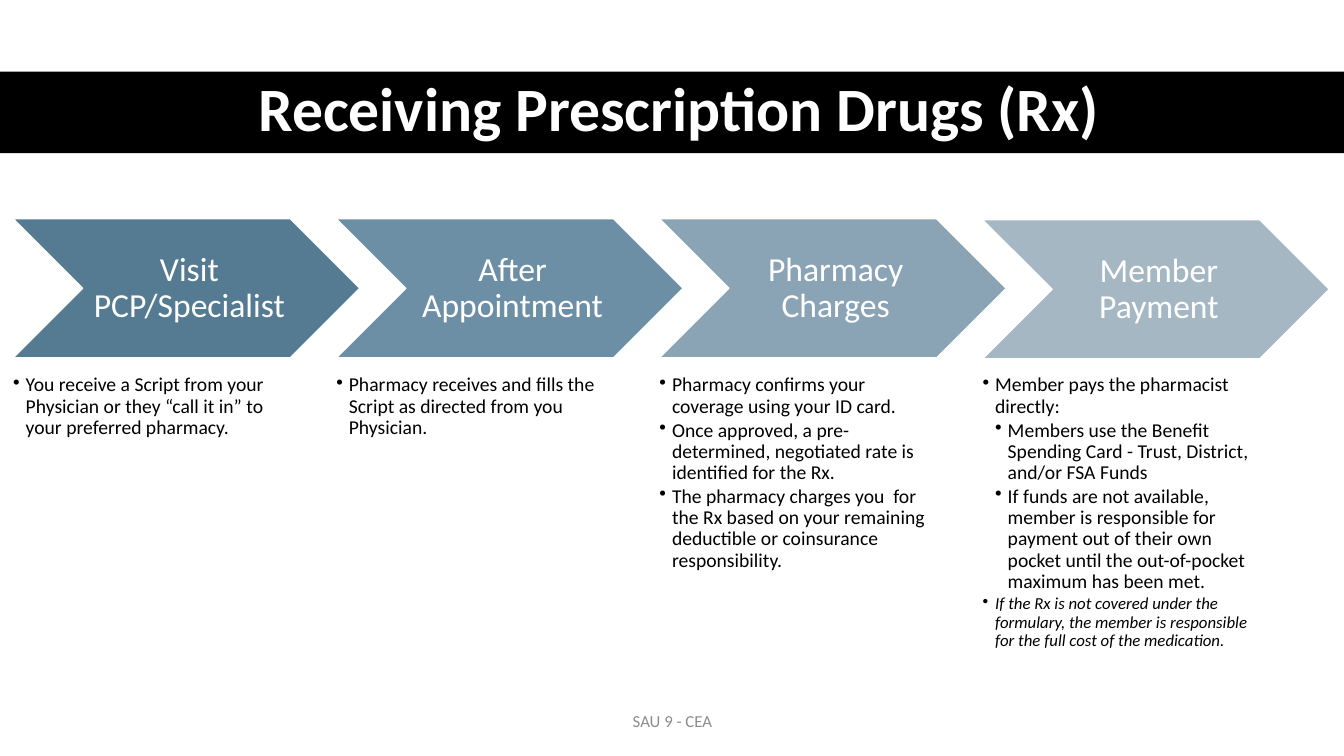
from pptx import Presentation, util as u
from pptx.dml.color import RGBColor
from pptx.enum import shapes, text
from pptx.oxml.ns import qn
from lxml import etree

Inches, Pt = u.Inches, u.Pt
CENTER, MIDDLE = text.PP_ALIGN.CENTER, text.MSO_ANCHOR.MIDDLE


def color(code):
    return RGBColor.from_string(code)


def style(para, size, code, bold=False, italic=False):
    for run in para.runs:
        font = run.font
        font.name, font.size = "Calibri", Pt(size)
        font.bold, font.italic = bold, italic
        font.color.rgb = color(code)


# Each step: chevron label, fill, then bullets as (level, size, italic, words)
steps = [
    ("Visit PCP/Specialist", "547B92", [
        (0, 14, False, "You receive a Script from your Physician or they “call it in” to your preferred pharmacy."),
    ]),
    ("After Appointment", "6C8FA6", [
        (0, 14, False, "Pharmacy receives and fills the Script as directed from you Physician."),
    ]),
    ("Pharmacy Charges", "8AA3B5", [
        (0, 14, False, "Pharmacy confirms your coverage using your ID card."),
        (0, 14, False, "Once approved, a pre-determined, negotiated rate is identified for the Rx."),
        (0, 14, False, "The pharmacy charges you  for the Rx based on your remaining deductible or coinsurance responsibility."),
    ]),
    ("Member Payment", "A6B7C4", [
        (0, 14, False, "Member pays the pharmacist directly:"),
        (1, 14, False, "Members use the Benefit Spending Card - Trust, District, and/or FSA Funds"),
        (1, 14, False, "If funds are not available, member is responsible for payment out of their own pocket until the out-of-pocket maximum has been met."),
        (0, 12, True, "If the Rx is not covered under the formulary, the member is responsible for the full cost of the medication."),
    ]),
]

deck = Presentation()
deck.slide_width, deck.slide_height = Inches(13.33), Inches(7.5)
slide = deck.slides.add_slide(deck.slide_layouts[6])
items = slide.shapes

# Title band
band = items.add_shape(shapes.MSO_SHAPE.RECTANGLE, 0, Inches(0.71), Inches(13.33), Inches(0.81))
band.shadow.inherit = False
band.fill.solid()
band.fill.fore_color.rgb = color("000000")
band.line.fill.background()

# Title and footer
lines = [
    ("Receiving Prescription Drugs (Rx)", (0.61, 0.7, 12.26, 0.81), 44, "FFFFFF", True, 0.9),
    ("SAU 9 - CEA", (4.42, 6.95, 4.5, 0.4), 12, "8C8C8C", False, 1.0),
]
for words, spot, size, code, bold, gap in lines:
    frame = items.add_textbox(*map(Inches, spot)).text_frame
    frame.word_wrap, frame.vertical_anchor = True, MIDDLE
    frame.text = words
    para = frame.paragraphs[0]
    para.alignment, para.line_spacing = CENTER, gap
    style(para, size, code, bold)

# Four steps: a chevron with its bullets below
for i, (label, fill, points) in enumerate(steps):
    left = Inches(0.13 + i * 3.205)
    top = Inches(2.18 if i == 3 else 2.17)
    arrow = items.add_shape(shapes.MSO_SHAPE.CHEVRON, left, top, Inches(3.44), Inches(1.38))
    arrow.shadow.inherit = False
    arrow.fill.solid()
    arrow.fill.fore_color.rgb = color(fill)
    arrow.line.color.rgb = color("FFFFFF")
    arrow.line.width = Pt(1)
    frame = arrow.text_frame
    frame.word_wrap, frame.vertical_anchor = True, MIDDLE
    frame.margin_left = Inches(0.1)
    frame.margin_top = frame.margin_right = frame.margin_bottom = Inches(0.04)
    frame.text = label
    para = frame.paragraphs[0]
    para.alignment, para.line_spacing = CENTER, 0.9
    style(para, 24, "FFFFFF")

    frame = items.add_textbox(left, Inches(3.72), Inches(2.75), Inches(2.82)).text_frame
    frame.word_wrap = True
    frame.margin_left = frame.margin_top = frame.margin_right = frame.margin_bottom = 0
    frame.text = "\n".join(point[3] for point in points)
    for para, (level, size, italic, words) in zip(frame.paragraphs, points):
        para.level = level
        para.line_spacing, para.space_after = 0.9, Pt(2)
        style(para, size, "000000", italic=italic)
        props = para._p.get_or_add_pPr()
        props.set("marL", str(Inches(0.125 * (level + 1))))
        props.set("indent", str(Inches(-0.125)))
        etree.SubElement(props, qn("a:buChar")).set("char", "•")

deck.save("out.pptx")
